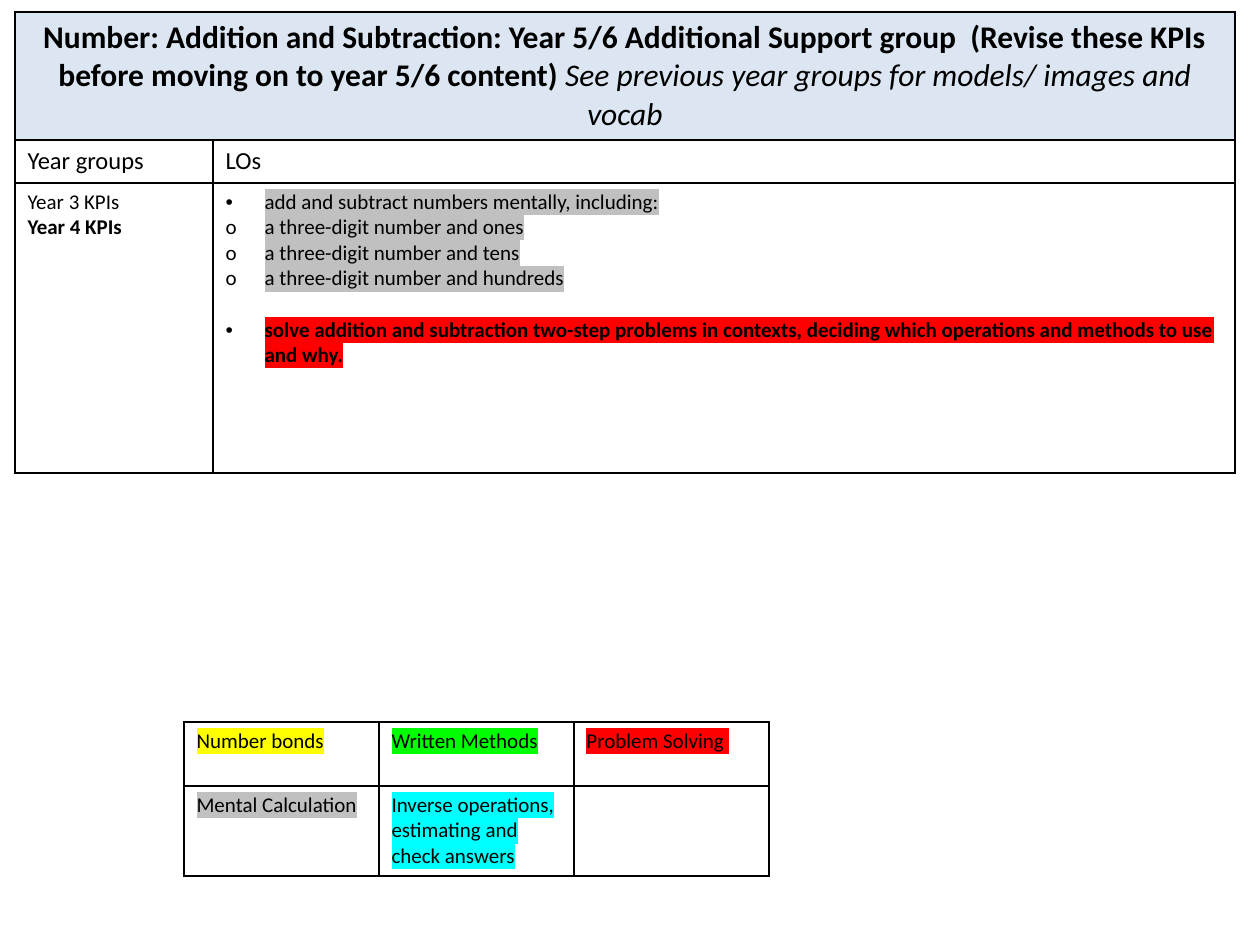
from lxml import etree
from pptx import Presentation
from pptx.dml.color import RGBColor
from pptx.enum.text import PP_ALIGN
from pptx.oxml.ns import qn
from pptx.util import Emu, Pt

CENTER = PP_ALIGN.CENTER
BLACK = RGBColor(0, 0, 0)
PALE = RGBColor(0xDC, 0xE6, 0xF2)
GREY = RGBColor(0xC0, 0xC0, 0xC0)
RED = RGBColor(0xFF, 0, 0)
YELLOW = RGBColor(0xFF, 0xFF, 0)
GREEN = RGBColor(0, 0xFF, 0)
CYAN = RGBColor(0, 0xFF, 0xFF)
FONT = "Calibri"
INDENT = 39

GOALS = [
    ("•", "add and subtract numbers mentally, including:"),
    ("o", "a three-digit number and ones"),
    ("o", "a three-digit number and tens"),
    ("o", "a three-digit number and hundreds"),
]
KEY = [
    [("Number bonds", YELLOW), ("Written Methods", GREEN), ("Problem Solving ", RED)],
    [("Mental Calculation", GREY),
     ("Inverse operations, estimating and check answers", CYAN)],
]


def px(n):
    return Emu(round(n * 914400 / 126))


def add_run(para, text, size=12, bold=False, italic=False, mark=None):
    """Add a run; mark is its highlight colour."""
    run = para.add_run()
    run.text = text
    font = run.font
    font.name, font.size = FONT, Pt(size)
    font.bold, font.italic = bold, italic
    font.color.rgb = BLACK
    if mark is not None:
        light = etree.Element(qn("a:highlight"))
        etree.SubElement(light, qn("a:srgbClr"), val=str(mark))
        run.font._element.find(qn("a:solidFill")).addnext(light)


def add_para(cell, first=False):
    frame = cell.text_frame
    return frame.paragraphs[0] if first else frame.add_paragraph()


def set_bullet(para, char):
    props = para._p.get_or_add_pPr()
    props.set("marL", str(px(INDENT)))
    props.set("indent", str(-px(INDENT)))
    etree.SubElement(props, qn("a:buFont"), typeface="Arial" if char == "•" else FONT)
    etree.SubElement(props, qn("a:buChar"), char=char)


def set_border(cell):
    props = cell._tc.get_or_add_tcPr()
    for side in ("lnL", "lnR", "lnT", "lnB"):
        line = etree.SubElement(props, qn("a:" + side), w=str(Pt(1)))
        fill = etree.SubElement(line, qn("a:solidFill"))
        etree.SubElement(fill, qn("a:srgbClr"), val=str(BLACK))


def add_grid(slide, left, top, cols, rows):
    """Add a plain table with thin black borders."""
    frame = slide.shapes.add_table(len(rows), len(cols), px(left), px(top),
                                   px(sum(cols)), px(sum(rows)))
    table = frame.table
    table.first_row = table.horz_banding = False
    for col, width in zip(table.columns, cols):
        col.width = px(width)
    for row, height in zip(table.rows, rows):
        row.height = px(height)
    for cell in table.iter_cells():
        set_border(cell)
        cell.fill.background()
    return table


def add_plan(slide):
    table = add_grid(slide, 15, 12, [198, 1022], [128, 43, 290])

    head = table.cell(0, 0)
    head.merge(table.cell(0, 1))
    head.fill.solid()
    head.fill.fore_color.rgb = PALE
    para = add_para(head, True)
    para.alignment = CENTER
    add_run(para, "Number: Addition and Subtraction: Year 5/6 Additional Support group"
            "  (Revise these KPIs before moving on to year 5/6 content) ", 18, bold=True)
    add_run(para, "See previous year groups for models/ images and vocab", 18, italic=True)

    for col, text in enumerate(("Year groups", "LOs")):
        add_run(add_para(table.cell(1, col), True), text, 14)

    years = table.cell(2, 0)
    add_run(add_para(years, True), "Year 3 KPIs")
    add_run(add_para(years), "Year 4 KPIs", bold=True)

    goals = table.cell(2, 1)
    for i, (char, text) in enumerate(GOALS):
        para = add_para(goals, i == 0)
        set_bullet(para, char)
        add_run(para, text, mark=GREY)
    para = add_para(goals)
    set_bullet(para, "•")
    para.space_before = Pt(14.6)
    add_run(para, "solve addition and subtraction two-step problems in contexts, "
            "deciding which operations and methods to use and why.", bold=True, mark=RED)


def add_key(slide):
    table = add_grid(slide, 184, 722, [195] * 3, [64, 90])
    for r, row in enumerate(KEY):
        for c, (text, mark) in enumerate(row):
            add_run(add_para(table.cell(r, c), True), text, mark=mark)


def main():
    deck = Presentation()
    deck.slide_width, deck.slide_height = px(1260), px(945)
    slide = deck.slides.add_slide(deck.slide_layouts[6])
    add_plan(slide)
    add_key(slide)
    deck.save("out.pptx")


if __name__ == "__main__":
    main()
